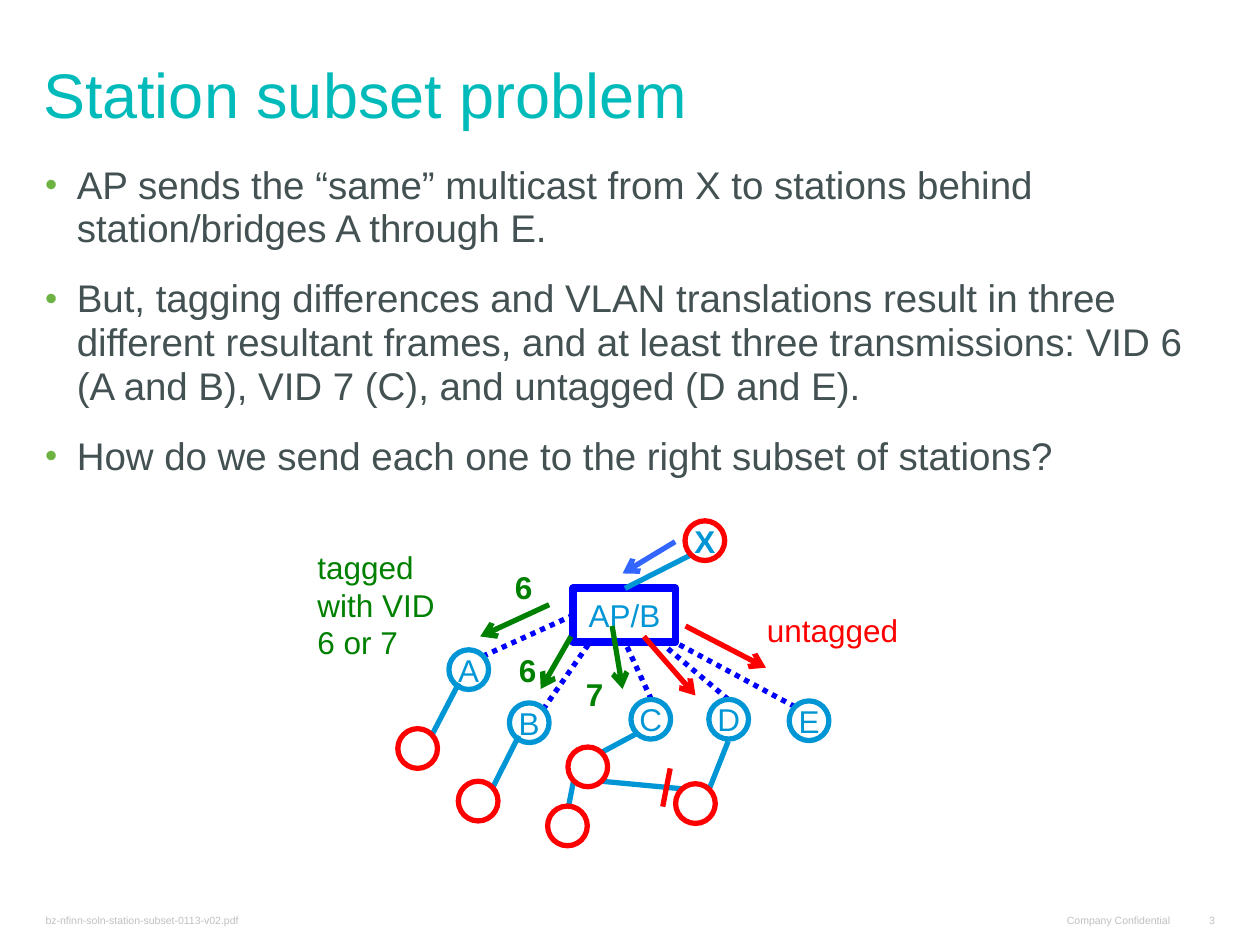
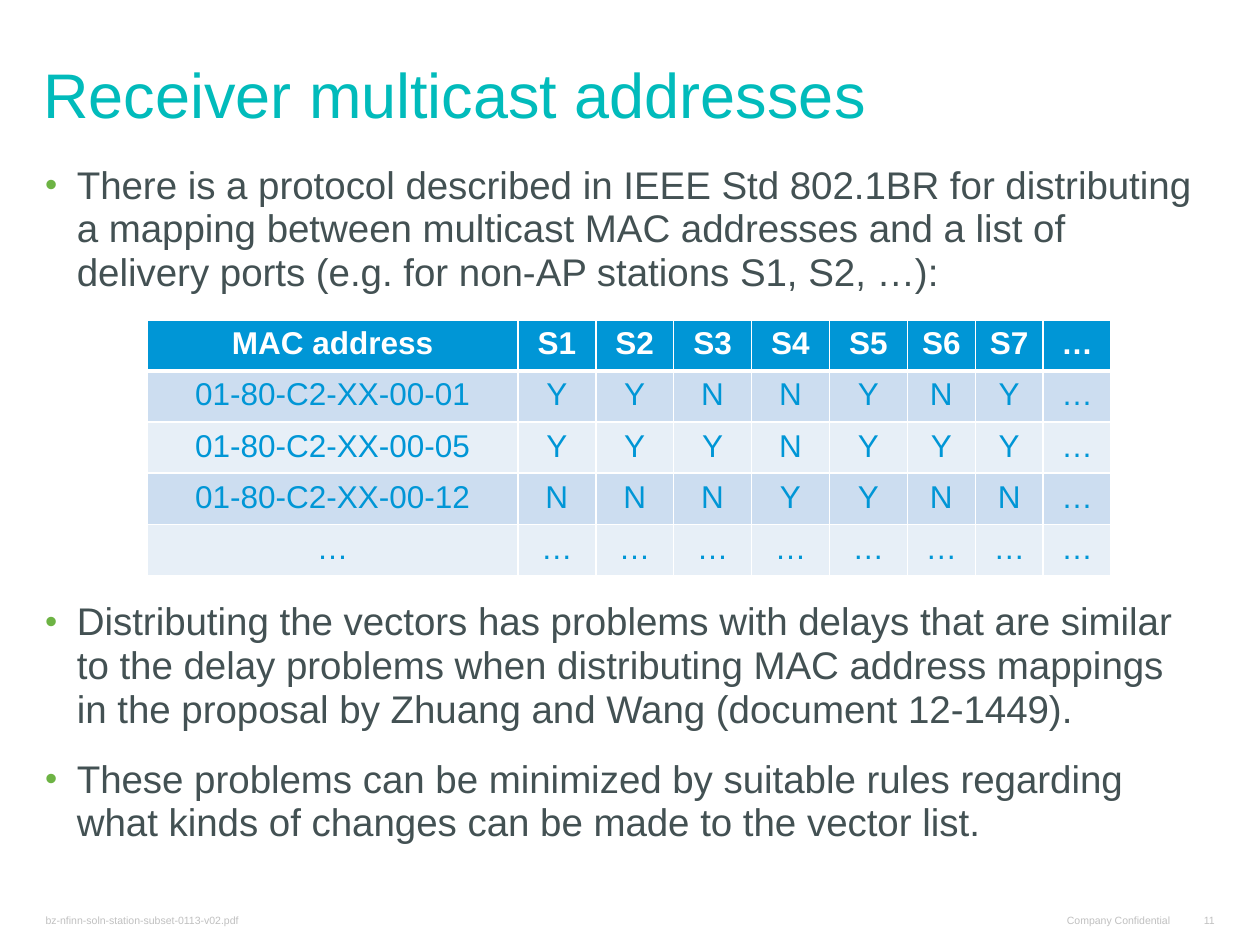
from dataclasses import dataclass

from lxml import etree
from pptx import Presentation
from pptx import util as u
from pptx.dml.color import RGBColor
from pptx.enum import dml, shapes, text
from pptx.oxml import ns


@dataclass(frozen=True)
class Theme:
    font: str = "Arial"
    title: str = "01BBBB"
    body: str = "435153"
    bullet: str = "6DB344"
    footer: str = "C0C0C0"
    cyan: str = "0096D6"
    blue: str = "0000FF"
    source_flow: str = "3366FF"
    green: str = "008000"
    red: str = "FF0000"
    white: str = "FFFFFF"
    bands: tuple = ("CCDDF0", "E7EFF7")
    title_size: int = 36
    body_size: int = 22
    label_size: int = 18
    footer_size: int = 6


THEME = Theme()
DIAMETER = 0.8


def add_xml(parent, tag, **attributes):
    return etree.SubElement(parent, ns.qn(tag), attributes)


def add_bullet(paragraph):
    properties = paragraph._p.get_or_add_pPr()
    properties.set("marL", str(u.Cm(0.64)))
    properties.set("indent", str(-u.Cm(0.64)))
    add_xml(add_xml(properties, "a:buClr"), "a:srgbClr", val=THEME.bullet)
    add_xml(properties, "a:buSzPct", val="90000")
    add_xml(properties, "a:buFont", typeface=THEME.font)
    add_xml(properties, "a:buChar", char="•")


def write(frame, lines, *, size=THEME.label_size, color=THEME.cyan, bold=False,
          align=None, anchor=None, spacing=None, gap=0, bullet=False,
          margins=None, wrap=True):
    """Fill a text frame with one paragraph per line; margins are (side, top)."""
    frame.word_wrap = wrap
    if anchor is not None:
        frame.vertical_anchor = anchor
    if margins:
        frame.margin_left = frame.margin_right = u.Cm(margins[0])
        frame.margin_top = frame.margin_bottom = u.Cm(margins[1])
    for index, line in enumerate(lines):
        paragraph = frame.add_paragraph() if index else frame.paragraphs[0]
        if bullet:
            add_bullet(paragraph)
        paragraph.alignment = align
        if spacing:
            paragraph.line_spacing = spacing
        if index and gap:
            paragraph.space_before = u.Pt(gap)
        run = paragraph.add_run()
        run.text = line
        run.font.name = THEME.font
        run.font.size = u.Pt(size)
        run.font.bold = bold
        run.font.color.rgb = RGBColor.from_string(color)


def set_borders(cell, widths):
    """Draw white borders; widths are points for left, right, top, bottom."""
    properties = cell._tc.get_or_add_tcPr()
    for index, (side, width) in enumerate(zip("LRTB", widths)):
        border = etree.Element(ns.qn("a:ln" + side), w=str(u.Pt(width)))
        add_xml(add_xml(border, "a:solidFill"), "a:srgbClr", val=THEME.white)
        properties.insert(index, border)


class Deck:
    def __init__(self):
        self.presentation = Presentation()
        self.presentation.slide_width = u.Cm(25.4)
        self.presentation.slide_height = u.Cm(19.05)
        self.slide = None

    def start_slide(self, title, number):
        """Add a slide with its title and the shared footer."""
        self.slide = self.presentation.slides.add_slide(
            self.presentation.slide_layouts[6])
        self.label([title], 0.64, 0.43, 23.85, 2.34, size=THEME.title_size,
                   color=THEME.title, spacing=0.8, margins=(0.23, 0.13),
                   anchor=text.MSO_ANCHOR.BOTTOM)
        right = text.PP_ALIGN.RIGHT
        for line, left, width, align in (
                ("bz-nfinn-soln-station-subset-0113-v02.pdf", 0.69, 9.5, None),
                ("Company Confidential", 20.57, 3.25, right),
                (str(number), 23.75, 0.97, right)):
            self.label([line], left, 18.29, width, 0.48, size=THEME.footer_size,
                       color=THEME.footer, align=align, margins=(0.23, 0.1),
                       anchor=text.MSO_ANCHOR.BOTTOM)

    def label(self, lines, left, top, width, height, **style):
        box = self.slide.shapes.add_textbox(*map(u.Cm, (left, top, width, height)))
        write(box.text_frame, lines, **style)

    def bullets(self, lines, top, height):
        self.label(lines, 0.66, top, 23.83, height, size=THEME.body_size,
                   color=THEME.body, spacing=0.95, gap=14.8, bullet=True)

    def outline(self, kind, left, top, width, height, color, weight, caption="",
                bold=False):
        """Add an unfilled shape with an optional centred caption."""
        shape = self.slide.shapes.add_shape(
            kind, *map(u.Cm, (left, top, width, height)))
        shape.shadow.inherit = False
        shape.fill.background()
        shape.line.color.rgb = RGBColor.from_string(color)
        shape.line.width = u.Pt(weight)
        if caption:
            write(shape.text_frame, [caption], bold=bold, margins=(0, 0), wrap=False,
                  align=text.PP_ALIGN.CENTER, anchor=text.MSO_ANCHOR.MIDDLE)

    def node(self, x, y, color, caption="", bold=False):
        """Add a round network node centred on (x, y)."""
        self.outline(shapes.MSO_SHAPE.OVAL, x - DIAMETER / 2, y - DIAMETER / 2,
                     DIAMETER, DIAMETER, color, 3, caption, bold)

    def line(self, ends, color, dotted=False, arrow=False):
        connector = self.slide.shapes.add_connector(
            shapes.MSO_CONNECTOR.STRAIGHT, *map(u.Cm, ends))
        connector.line.color.rgb = RGBColor.from_string(color)
        connector.line.width = u.Pt(3)
        if dotted:
            connector.line.dash_style = dml.MSO_LINE.ROUND_DOT
        if arrow:
            add_xml(connector.line._get_or_add_ln(), "a:tailEnd", type="arrow")
        add_xml(connector._element.spPr, "a:effectLst")

    def table(self, rows, left, top, widths, row_height):
        table = self.slide.shapes.add_table(
            len(rows), len(widths), u.Cm(left), u.Cm(top),
            u.Cm(sum(widths)), u.Cm(row_height * len(rows))).table
        for column, width in zip(table.columns, widths):
            column.width = u.Cm(width)
        for row_index, row in enumerate(rows):
            table.rows[row_index].height = u.Cm(row_height)
            header = row_index == 0
            fill = THEME.cyan if header else THEME.bands[(row_index - 1) % 2]
            for column_index, value in enumerate(row):
                cell = table.cell(row_index, column_index)
                cell.fill.solid()
                cell.fill.fore_color.rgb = RGBColor.from_string(fill)
                set_borders(cell, (1, 1, 3 if row_index == 1 else 1,
                                   3 if header else 1))
                write(cell.text_frame, [value], bold=header,
                      color=THEME.white if header else THEME.cyan,
                      align=text.PP_ALIGN.CENTER)


def draw_network(deck):
    wireless_links = [
        (10.95, 14.3, 11.89, 12.95), (13.13, 14.1, 12.6, 12.95),
        (14.68, 14.1, 13.41, 13.03), (16.03, 14.25, 13.61, 12.95),
        (9.73, 13.23, 11.56, 12.4)]
    wired_links = [
        (10.46, 14.83, 9.93, 15.88), (12.85, 14.78, 12.14, 15.16),
        (13.74, 15.9, 12.14, 15.75), (11.56, 15.75, 11.46, 16.26),
        (14.3, 15.9, 14.68, 14.94), (13.94, 11.18, 12.6, 11.86),
        (9.25, 13.77, 8.71, 14.81)]
    flows = {
        THEME.green: [(11.51, 12.83, 10.9, 13.89), (12.34, 12.62, 12.55, 13.89),
                      (11.07, 12.19, 9.68, 12.83)],
        THEME.red: [(12.98, 12.83, 14.02, 14.02), (13.82, 12.62, 15.44, 13.46)],
        THEME.source_flow: [(13.61, 10.92, 12.55, 11.56)]}
    bridges = {"A": (9.45, 13.5), "B": (10.67, 14.57), "C": (13.12, 14.5),
               "D": (14.69, 14.5), "E": (16.31, 14.53)}
    stations = [(8.42, 15.09), (9.64, 16.15), (11.44, 16.65), (11.85, 15.46),
                (14.02, 16.2)]
    blocked_port = (13.51, 15.49, 13.36, 16.26)

    deck.outline(shapes.MSO_SHAPE.RECTANGLE, 11.56, 11.86, 2.06, 1.09,
                 THEME.blue, 4.5, "AP/B")
    for ends in wireless_links:
        deck.line(ends, THEME.blue, dotted=True)
    for ends in wired_links:
        deck.line(ends, THEME.cyan)
    for x, y in stations:
        deck.node(x, y, THEME.red)
    for name, (x, y) in bridges.items():
        deck.node(x, y, THEME.cyan, name)
    deck.node(14.21, 10.9, THEME.red, "X", bold=True)
    for color, arrows in flows.items():
        for ends in arrows:
            deck.line(ends, color, arrow=True)
    deck.line(blocked_port, THEME.red)

    deck.label(["tagged", "with VID", "6 or 7"], 6.15, 10.92, 3.2, 2.57,
               color=THEME.green)
    deck.label(["untagged"], 15.21, 12.19, 3.4, 1.02, color=THEME.red)
    for vid, left, top in (("6", 10.13, 11.33), ("6", 10.21, 13), ("7", 11.56, 13.49)):
        deck.label([vid], left, top, 0.9, 1.02, color=THEME.green, bold=True)


def build_subset_problem(deck):
    deck.start_slide("Station subset problem", 3)
    deck.bullets([
        "AP sends the “same” multicast from X to stations behind station/bridges "
        "A through E.",
        "But, tagging differences and VLAN translations result in three different "
        "resultant frames, and at least three transmissions: VID 6 (A and B), "
        "VID 7 (C), and untagged (D and E).",
        "How do we send each one to the right subset of stations?"], 3.18, 6.8)
    draw_network(deck)


def build_receiver_addresses(deck):
    deck.start_slide("Receiver multicast addresses", 11)
    deck.bullets([
        "There is a protocol described in IEEE Std 802.1BR for distributing a "
        "mapping between multicast MAC addresses and a list of delivery ports "
        "(e.g. for non-AP stations S1, S2, …):"], 3.18, 3)
    deliveries = {"01-80-C2-XX-00-01": "YYNNYNY…", "01-80-C2-XX-00-05": "YYYNYYY…",
                  "01-80-C2-XX-00-12": "NNNYYNN…", "…": "…" * 8}
    header = ["MAC address", *(f"S{port}" for port in range(1, 8)), "…"]
    rows = [header] + [[address, *ports] for address, ports in deliveries.items()]
    deck.table(rows, 2.97, 6.45, [7.47] + [1.57] * 5 + [1.37] * 3, 1.03)
    deck.bullets([
        "Distributing the vectors has problems with delays that are similar to the "
        "delay problems when distributing MAC address mappings in the proposal by "
        "Zhuang and Wang (document 12-1449).",
        "These problems can be minimized by suitable rules regarding what kinds of "
        "changes can be made to the vector list."], 11.98, 5.65)


def main():
    deck = Deck()
    build_subset_problem(deck)
    build_receiver_addresses(deck)
    deck.presentation.save("out.pptx")


if __name__ == "__main__":
    main()
